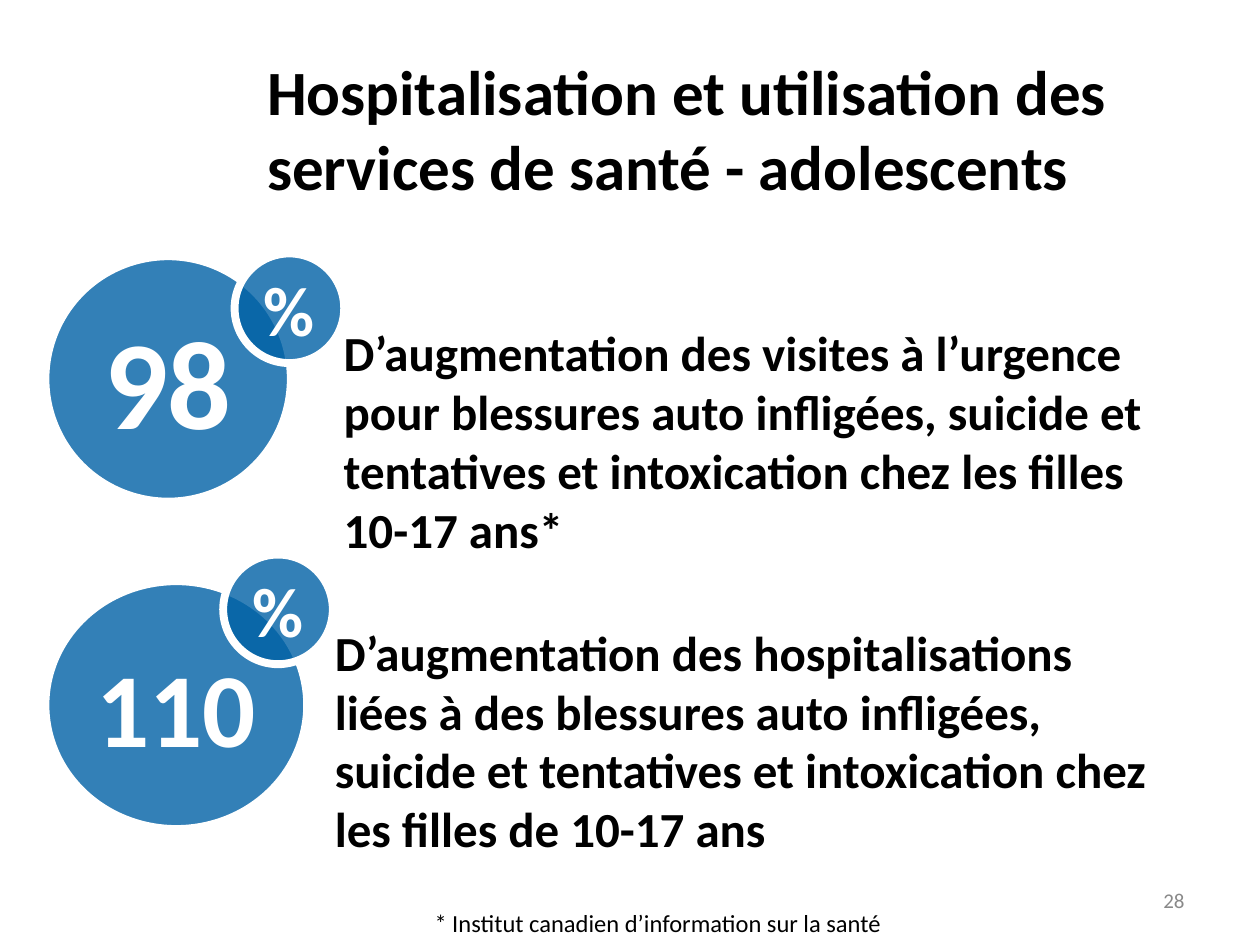
from dataclasses import dataclass

from lxml.etree import SubElement
from pptx import Presentation
from pptx.dml.color import RGBColor as RGB
from pptx.enum.shapes import MSO_SHAPE as Shape
from pptx.enum.text import MSO_ANCHOR as Anchor, MSO_AUTO_SIZE as Fit, PP_ALIGN as Align
from pptx.oxml.ns import qn
from pptx.util import Cm, Pt


@dataclass(frozen=True)
class Theme:
    face: str = "Calibri"
    ink: RGB = RGB(0, 0, 0)
    white: RGB = RGB(255, 255, 255)
    grey: RGB = RGB(0x89, 0x89, 0x89)
    blue: RGB = RGB(0x00, 0x61, 0xA5)
    alpha: int = 80
    title: int = 36
    body: int = 28
    unit: int = 40
    note: int = 14
    page: int = 12


THEME = Theme()

STATS = [
    {
        "box": (0.89, 5.11), "value": "98", "size": 72,
        "disc": (0, 0.03, 5, 5), "badge": (3.84, 0), "label": (5.79, 1.27, 16.64, 5.05),
        "text": "D’augmentation des visites à l’urgence pour blessures auto infligées, "
                "suicide et tentatives et intoxication chez les filles 10-17 ans*",
    },
    {
        "box": (0.89, 11.18), "value": "110", "size": 60,
        "disc": (0, 0.51, 5.33, 5.05), "badge": (3.61, 0), "label": (5.61, 1.24, 17.07, 5.05),
        "text": "D’augmentation des hospitalisations liées à des blessures auto infligées, "
                "suicide et tentatives et intoxication chez les filles de 10-17 ans",
    },
]


def write(frame, text, size, color=THEME.ink, bold=True, align=Align.LEFT,
          anchor=Anchor.TOP, wrap=True):
    look = {"word_wrap": wrap, "auto_size": Fit.NONE, "vertical_anchor": anchor}
    for name, value in look.items():
        setattr(frame, name, value)
    para = frame.paragraphs[0]
    para.alignment = align
    run = para.add_run()
    run.text = text
    for name, value in {"name": THEME.face, "size": Pt(size), "bold": bold}.items():
        setattr(run.font, name, value)
    run.font.color.rgb = color


def add_text(slide, box, text, size, **look):
    shape = slide.shapes.add_textbox(*map(Cm, box))
    write(shape.text_frame, text, size, **look)


def add_disc(slide, box, text, size, edge):
    """Draw a see-through circle with a white rim and centred text."""
    disc = slide.shapes.add_shape(Shape.OVAL, *map(Cm, box))
    disc.shadow.inherit = False
    disc.fill.solid()
    disc.fill.fore_color.rgb = THEME.blue
    tint = disc.fill._xPr.find(qn("a:solidFill"))[0]
    SubElement(tint, qn("a:alpha"), val=str(THEME.alpha * 1000))
    disc.line.color.rgb = THEME.white
    disc.line.width = Pt(edge)
    write(disc.text_frame, text, size, color=THEME.white, align=Align.CENTER,
          anchor=Anchor.MIDDLE, wrap=False)


def add_stat(slide, stat):
    """Place a figure, its percent badge and its sentence in one row."""
    left, top = stat["box"]

    def place(x, y, width, height):
        return left + x, top + y, width, height

    add_disc(slide, place(*stat["disc"]), stat["value"], stat["size"], 6)
    add_disc(slide, place(*stat["badge"], 2.21, 2.21), "%", THEME.unit, 4.5)
    add_text(slide, place(*stat["label"]), stat["text"], THEME.body)


def add_title(slide, box, text):
    title = slide.shapes.title
    for name, value in zip(("left", "top", "width", "height"), box):
        setattr(title, name, Cm(value))
    write(title.text_frame, text, THEME.title, anchor=Anchor.MIDDLE)


def add_foot(slide, box):
    """Place the source note and the page number."""
    left, top = box
    add_text(slide, (left, top + 0.54, 9.63, 0.86),
             "* Institut canadien d’information sur la santé", THEME.note,
             bold=False, wrap=False)
    add_text(slide, (left + 9.7, top, 5.92, 1.01), "28", THEME.page, color=THEME.grey,
             bold=False, align=Align.RIGHT, anchor=Anchor.MIDDLE)


def main():
    deck = Presentation()
    deck.slide_width, deck.slide_height = Cm(25.4), Cm(19.05)
    slide = deck.slides.add_slide(deck.slide_layouts[5])
    add_title(slide, (5.13, 0.99, 18.21, 3.18),
              "Hospitalisation et utilisation des services de santé - adolescents")
    for stat in STATS:
        add_stat(slide, stat)
    add_foot(slide, (8.51, 17.65))
    deck.save("out.pptx")


if __name__ == "__main__":
    main()
